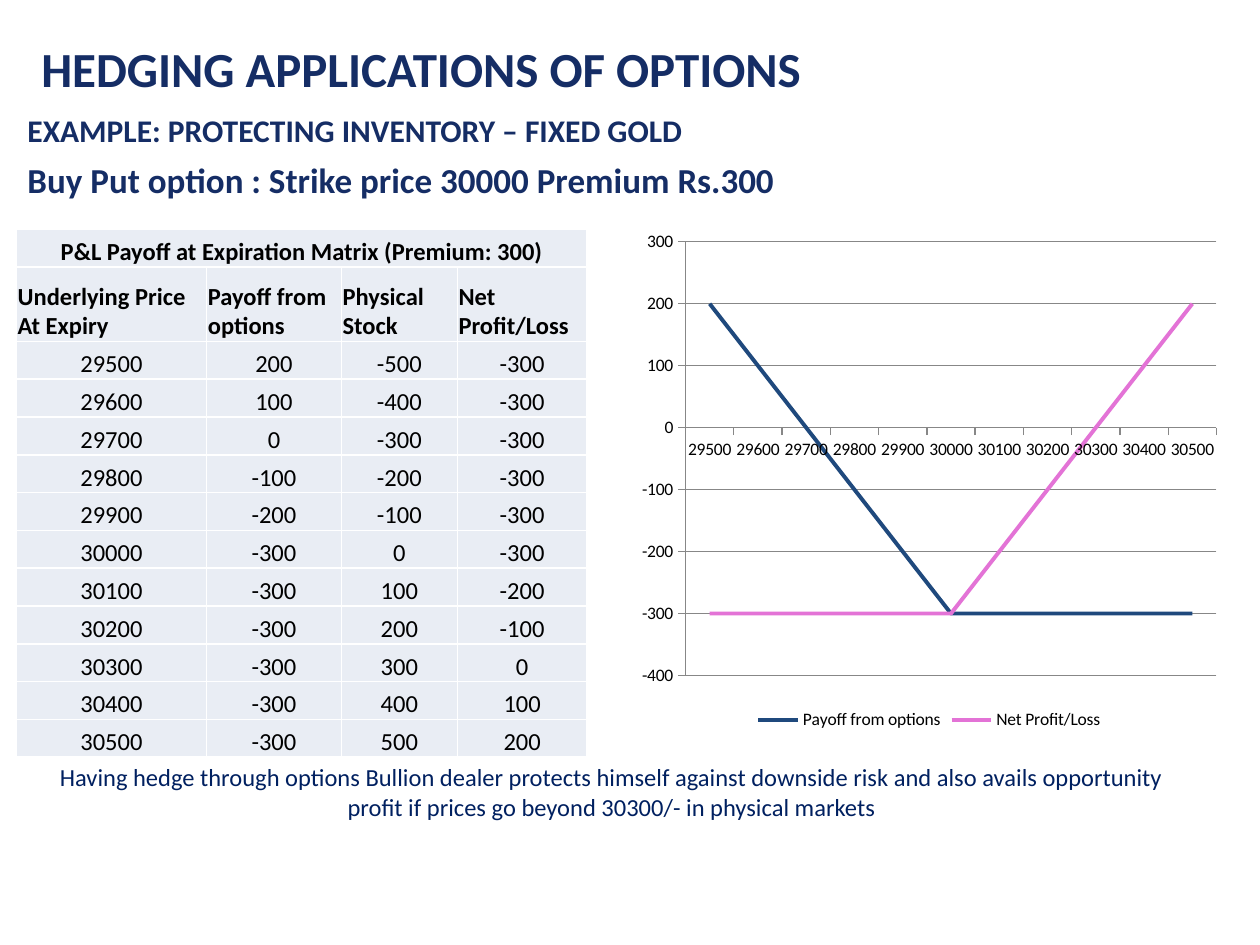
from lxml import etree
from pptx import Presentation
from pptx import util as u
from pptx.chart.data import CategoryChartData
from pptx.dml.color import RGBColor
from pptx.enum import chart as charts, text
from pptx.oxml.ns import qn

FONT = "Calibri"
COLOURS = {"heading": "152D65", "conclusion": "002060", "ink": "000000",
           "cell": "E9EDF4", "border": "FFFFFF", "grid": "878787",
           "options": "1F497D", "net": "E373D6"}
STRIKE, PREMIUM = 30000, 300
PRICES = range(29500, 30501, 100)
PAYOFFS = [max(STRIKE - price, 0) - PREMIUM for price in PRICES]
STOCK = [price - STRIKE for price in PRICES]
NET = [payoff + stock for payoff, stock in zip(PAYOFFS, STOCK)]


def rgb(name):
    return RGBColor.from_string(COLOURS[name])


def set_values(target, values):
    for name, value in values.items():
        setattr(target, name, value)


def style_font(font, size, colour, bold=False):
    set_values(font, {"name": FONT, "size": u.Pt(size), "bold": bold})
    font.color.rgb = rgb(colour)


def add_words(slide, box, words, size, colour="heading", bold=True,
              align=text.PP_ALIGN.LEFT, anchor=text.MSO_ANCHOR.TOP, spacing=None):
    frame = slide.shapes.add_textbox(*map(u.Inches, box)).text_frame
    set_values(frame, {"word_wrap": True, "vertical_anchor": anchor})
    paragraph = frame.paragraphs[0]
    set_values(paragraph, {"text": words, "alignment": align, "line_spacing": spacing})
    style_font(paragraph.runs[0].font, size, colour, bold)


def add_headings(slide, left, top):
    add_words(slide, (left + 0.11, top, 7.24, 0.55), "HEDGING APPLICATIONS OF OPTIONS",
              28, anchor=text.MSO_ANCHOR.MIDDLE, spacing=0.8)
    add_words(slide, (left, top + 0.52, 7.24, 0.55),
              "EXAMPLE: PROTECTING INVENTORY – FIXED GOLD", 18)
    add_words(slide, (left, top + 0.9, 7.74, 0.44),
              "Buy Put option : Strike price 30000 Premium Rs.300", 20)


def add_borders(cell):
    properties = cell._tc.get_or_add_tcPr()
    for index, side in enumerate(("lnL", "lnR", "lnT", "lnB")):
        line = etree.Element(qn(f"a:{side}"), w=str(u.Pt(1)))
        fill = etree.SubElement(line, qn("a:solidFill"))
        etree.SubElement(fill, qn("a:srgbClr"), val=COLOURS["border"])
        properties.insert(index, line)


def fill_cell(cell, words, bold, align):
    set_values(cell, {"text": words, "vertical_anchor": text.MSO_ANCHOR.BOTTOM,
                      "margin_left": u.Inches(0.01), "margin_right": u.Inches(0.01),
                      "margin_top": u.Inches(0.01), "margin_bottom": 0})
    cell.fill.solid()
    cell.fill.fore_color.rgb = rgb("cell")
    add_borders(cell)
    paragraph = cell.text_frame.paragraphs[0]
    paragraph.alignment = align
    style_font(paragraph.font, 14, "ink", bold)
    for run in paragraph.runs:
        style_font(run.font, 14, "ink", bold)


def add_payoff_table(slide, box):
    rows = [["P&L Payoff at Expiration Matrix (Premium: 300)", "", "", ""],
            ["Underlying Price At Expiry", "Payoff from options",
             "Physical Stock", "Net Profit/Loss"],
            *zip(PRICES, PAYOFFS, STOCK, NET)]
    table = slide.shapes.add_table(len(rows), 4, *map(u.Inches, box)).table
    for column, width in zip(table.columns, (1.51, 1.07, 0.92, 1.03)):
        column.width = u.Inches(width)
    for r, values in enumerate(rows):
        table.rows[r].height = u.Inches(0.59 if r == 1 else 0.3)
        align = text.PP_ALIGN.LEFT if r == 1 else text.PP_ALIGN.CENTER
        for c, value in enumerate(values):
            fill_cell(table.cell(r, c), str(value), r < 2, align)
    table.cell(0, 0).merge(table.cell(0, 3))


def add_payoff_chart(slide, box):
    data = CategoryChartData()
    data.categories = [str(price) for price in PRICES]
    data.add_series("Payoff from options", PAYOFFS)
    data.add_series("Net Profit/Loss", NET)
    chart = slide.shapes.add_chart(charts.XL_CHART_TYPE.LINE,
                                   *map(u.Inches, box), data).chart
    set_values(chart, {"has_title": False, "has_legend": True})
    style_font(chart.font, 10, "ink")
    set_values(chart.legend, {"position": charts.XL_LEGEND_POSITION.BOTTOM,
                              "include_in_layout": False})
    chart.plots[0].vary_by_categories = False
    for series, colour in zip(chart.plots[0].series, ("options", "net")):
        series.smooth = False
        series.format.line.color.rgb = rgb(colour)
        series.format.line.width = u.Pt(2.25)

    # Axes and gridlines
    prices, profit = chart.category_axis, chart.value_axis
    set_values(profit, {"minimum_scale": -400, "maximum_scale": 300,
                        "major_unit": 100, "has_major_gridlines": True})
    for axis in (prices, profit):
        axis.major_tick_mark = charts.XL_TICK_MARK.OUTSIDE
    for part in (prices, profit, profit.major_gridlines):
        part.format.line.color.rgb = rgb("grid")
        part.format.line.width = u.Pt(0.75)


def main():
    deck = Presentation()
    set_values(deck, {"slide_width": u.Inches(10), "slide_height": u.Inches(7.5)})
    slide = deck.slides.add_slide(deck.slide_layouts[6])
    add_headings(slide, 0.12, 0.31)
    add_payoff_chart(slide, (5, 1.76, 4.75, 4.07))
    add_payoff_table(slide, (0.13, 1.82, 4.54, 4.22))
    # Conclusion
    add_words(slide, (0.27, 6, 9.17, 0.57),
              "Having hedge through options Bullion dealer protects himself against "
              "downside risk and also avails opportunity profit if prices go beyond "
              "30300/- in physical markets", 14, "conclusion", False,
              text.PP_ALIGN.CENTER)
    deck.save("out.pptx")


if __name__ == "__main__":
    main()
